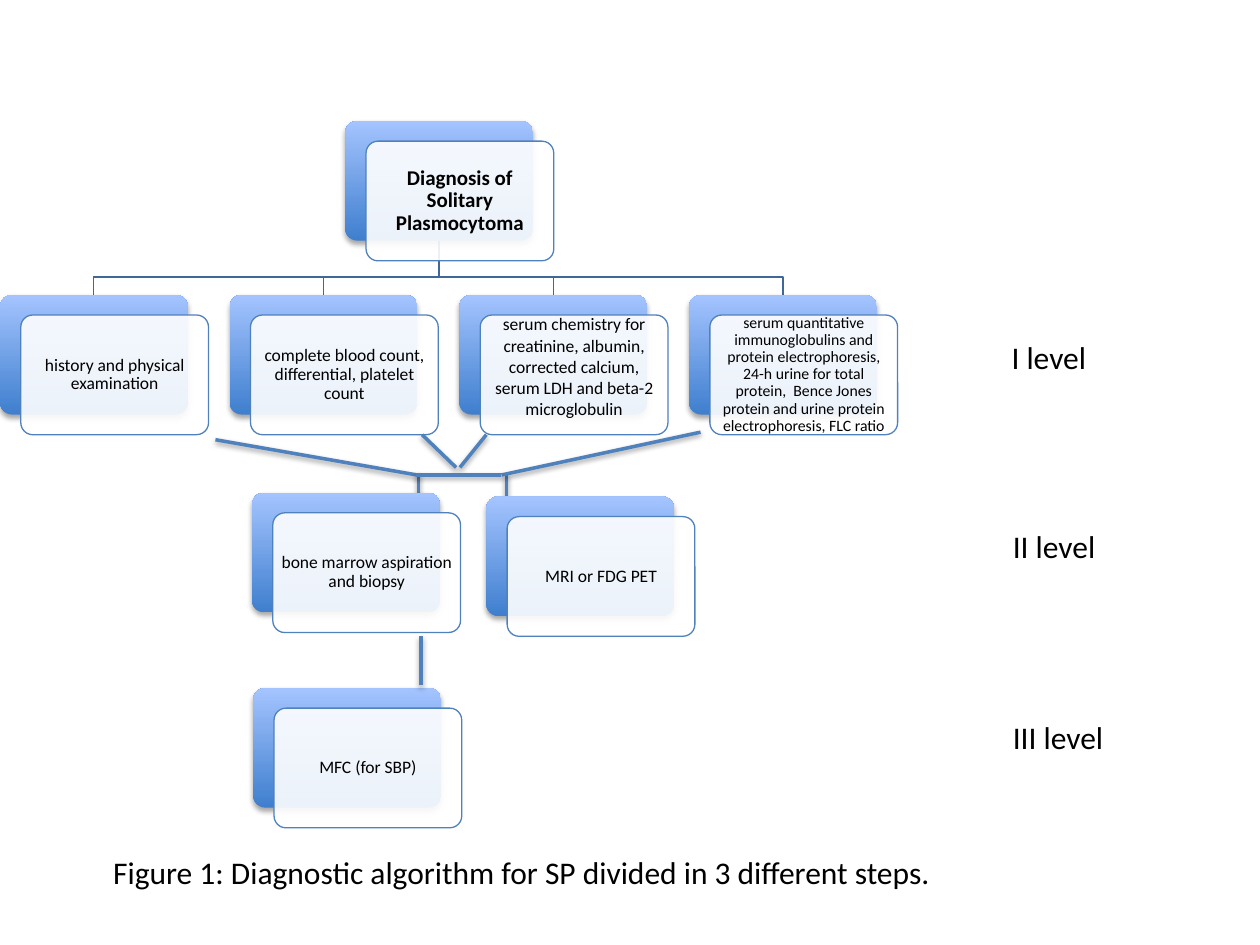
from typing import NamedTuple

from lxml.etree import SubElement
from pptx import Presentation
from pptx.dml.color import RGBColor
from pptx.enum.shapes import MSO_CONNECTOR as Connector, MSO_SHAPE as Shape
from pptx.enum.text import MSO_ANCHOR as Anchor, MSO_AUTO_SIZE as AutoSize, PP_ALIGN as Align
from pptx.oxml.ns import qn
from pptx.util import Inches, Pt

FONT = "Calibri"
BLUE, TREE_BLUE, BLACK, WHITE = "4F81BD", "3F6797", "000000", "FFFFFF"
GRADIENT = ("3F7FCE", "A4C4FF")
CARD_W, CARD_H = 1.49, 0.95
OFFSET_X, OFFSET_Y = 0.165, 0.16  # front panel relative to its backing
LEVEL_ONE_TOP, LEVEL_ONE_STEP = 2.34, 1.823
TREE_BEND = 2.2


class Card(NamedTuple):
    left: float
    top: float
    text: str
    size: float = 10
    bold: bool = False
    inset: float = 0.04
    spacing: float = 0.9
    lift: float = 0  # extra bottom inset that raises the text


class Label(NamedTuple):
    left: float
    top: float
    width: float
    text: str


class Link(NamedTuple):
    x1: float
    y1: float
    x2: float
    y2: float


ROOT = Card(2.74, 0.96, "Diagnosis of Solitary Plasmocytoma", 12, True, 0.05)
LEVEL_ONE = [
    Card(0, LEVEL_ONE_TOP, "history and physical examination"),
    Card(LEVEL_ONE_STEP, LEVEL_ONE_TOP, "complete blood count, differential, platelet count"),
    Card(2 * LEVEL_ONE_STEP, LEVEL_ONE_TOP,
         "serum chemistry for creatinine, albumin, corrected calcium, "
         "serum LDH and beta-2 microglobulin", spacing=1, lift=0.14),
    Card(3 * LEVEL_ONE_STEP, LEVEL_ONE_TOP,
         "serum quantitative immunoglobulins and protein electrophoresis, "
         "24-h urine for total protein,  Bence Jones protein and urine protein "
         "electrophoresis, FLC ratio", 9),
]
LATER_LEVELS = [
    Card(2, 3.91, "bone marrow aspiration and biopsy"),
    Card(2.01, 5.46, "MFC (for SBP)"),
    Card(3.86, 3.94, "MRI or FDG PET"),
]
LABELS = [
    Label(7.93, 2.63, 0.8, "I level"),
    Label(7.94, 4.13, 0.87, "II level"),
    Label(7.94, 5.65, 0.93, "III level"),
    Label(0.8, 6.72, 6.78, "Figure 1: Diagnostic algorithm for SP divided in 3 different steps."),
]
LINKS_BEHIND = [Link(3.32, 3.76, 3.32, 4.15), Link(4.02, 3.76, 4.02, 4.14)]
LINKS_IN_FRONT = [
    Link(1.71, 3.49, 3.31, 3.77),
    Link(3.35, 3.45, 3.62, 3.71),
    Link(3.86, 3.45, 3.65, 3.71),
    Link(5.56, 3.43, 3.98, 3.77),
    Link(3.3, 3.77, 3.98, 3.77),
    Link(3.34, 5.05, 3.34, 5.44),
]


def rgb(value: str) -> RGBColor:
    return RGBColor.from_string(value)


def set_line(line, colour: str, width: float) -> None:
    line.color.rgb = rgb(colour)
    line.width = Pt(width)


def add_shadow(shape, distance: float, opacity: int) -> None:
    effects = SubElement(shape._element.spPr, qn("a:effectLst"))
    shadow = SubElement(effects, qn("a:outerShdw"), blurRad=str(Pt(3.1)),
                        dist=str(Pt(distance)), dir="5400000", rotWithShape="0")
    colour = SubElement(shadow, qn("a:srgbClr"), val=BLACK)
    SubElement(colour, qn("a:alpha"), val=str(opacity * 1000))


def add_link(slide, link: Link) -> None:
    connector = slide.shapes.add_connector(Connector.STRAIGHT, *map(Inches, link))
    set_line(connector.line, BLUE, 2)
    add_shadow(connector, 1.6, 38)


def add_branch(slide, parent: Card, child: Card) -> None:
    start_x, start_y = parent.left + CARD_W / 2, parent.top + CARD_H
    end_x = child.left + CARD_W / 2
    builder = slide.shapes.build_freeform(Inches(start_x), Inches(start_y))
    corners = [(start_x, TREE_BEND), (end_x, TREE_BEND), (end_x, child.top)]
    builder.add_line_segments([(Inches(x), Inches(y)) for x, y in corners], close=False)
    branch = builder.convert_to_shape()
    branch.fill.background()
    set_line(branch.line, TREE_BLUE, 0.75)
    branch.shadow.inherit = False


def add_panel(slide, left: float, top: float):
    panel = slide.shapes.add_shape(Shape.ROUNDED_RECTANGLE, Inches(left), Inches(top),
                                   Inches(CARD_W), Inches(CARD_H))
    panel.adjustments[0] = 0.1
    return panel


def style_text(paragraph, size: float, bold: bool = False) -> None:
    font = paragraph.runs[0].font
    font.name, font.size, font.bold = FONT, Pt(size), bold
    font.color.rgb = rgb(BLACK)


def add_card(slide, card: Card) -> None:
    # Gradient backing
    backing = add_panel(slide, card.left, card.top)
    backing.fill.gradient()
    backing.fill.gradient_angle = 90
    for stop, colour in zip(backing.fill.gradient_stops, GRADIENT):
        stop.color.rgb = rgb(colour)
    backing.line.fill.background()
    add_shadow(backing, 1.8, 35)

    # Translucent front panel with the text
    front = add_panel(slide, card.left + OFFSET_X, card.top + OFFSET_Y)
    front.fill.solid()
    front.fill.fore_color.rgb = rgb(WHITE)
    white = front._element.spPr.find(qn("a:solidFill")).find(qn("a:srgbClr"))
    SubElement(white, qn("a:alpha"), val="90000")
    set_line(front.line, BLUE, 0.75)
    front.shadow.inherit = False

    frame = front.text_frame
    frame.text = card.text
    frame.word_wrap = True
    frame.vertical_anchor = Anchor.MIDDLE
    frame.margin_left = frame.margin_right = frame.margin_top = Inches(card.inset)
    frame.margin_bottom = Inches(card.inset + card.lift)
    paragraph = frame.paragraphs[0]
    paragraph.alignment = Align.CENTER
    paragraph.line_spacing = card.spacing
    style_text(paragraph, card.size, card.bold)


def add_label(slide, label: Label) -> None:
    box = slide.shapes.add_textbox(Inches(label.left), Inches(label.top),
                                   Inches(label.width), Inches(0.4))
    frame = box.text_frame
    frame.text = label.text
    frame.word_wrap = False
    frame.auto_size = AutoSize.SHAPE_TO_FIT_TEXT
    style_text(frame.paragraphs[0], 18)


def main() -> None:
    prs = Presentation()
    prs.slide_width, prs.slide_height = Inches(10), Inches(7.5)
    slide = prs.slides.add_slide(prs.slide_layouts[6])

    # Lines that run behind the cards
    for link in LINKS_BEHIND:
        add_link(slide, link)
    for child in reversed(LEVEL_ONE):
        add_branch(slide, ROOT, child)

    # Cards of all levels
    for card in [ROOT, *LEVEL_ONE, *LATER_LEVELS]:
        add_card(slide, card)

    # Level names, caption and the lines in front
    for label in LABELS:
        add_label(slide, label)
    for link in LINKS_IN_FRONT:
        add_link(slide, link)

    prs.save("out.pptx")


if __name__ == "__main__":
    main()
